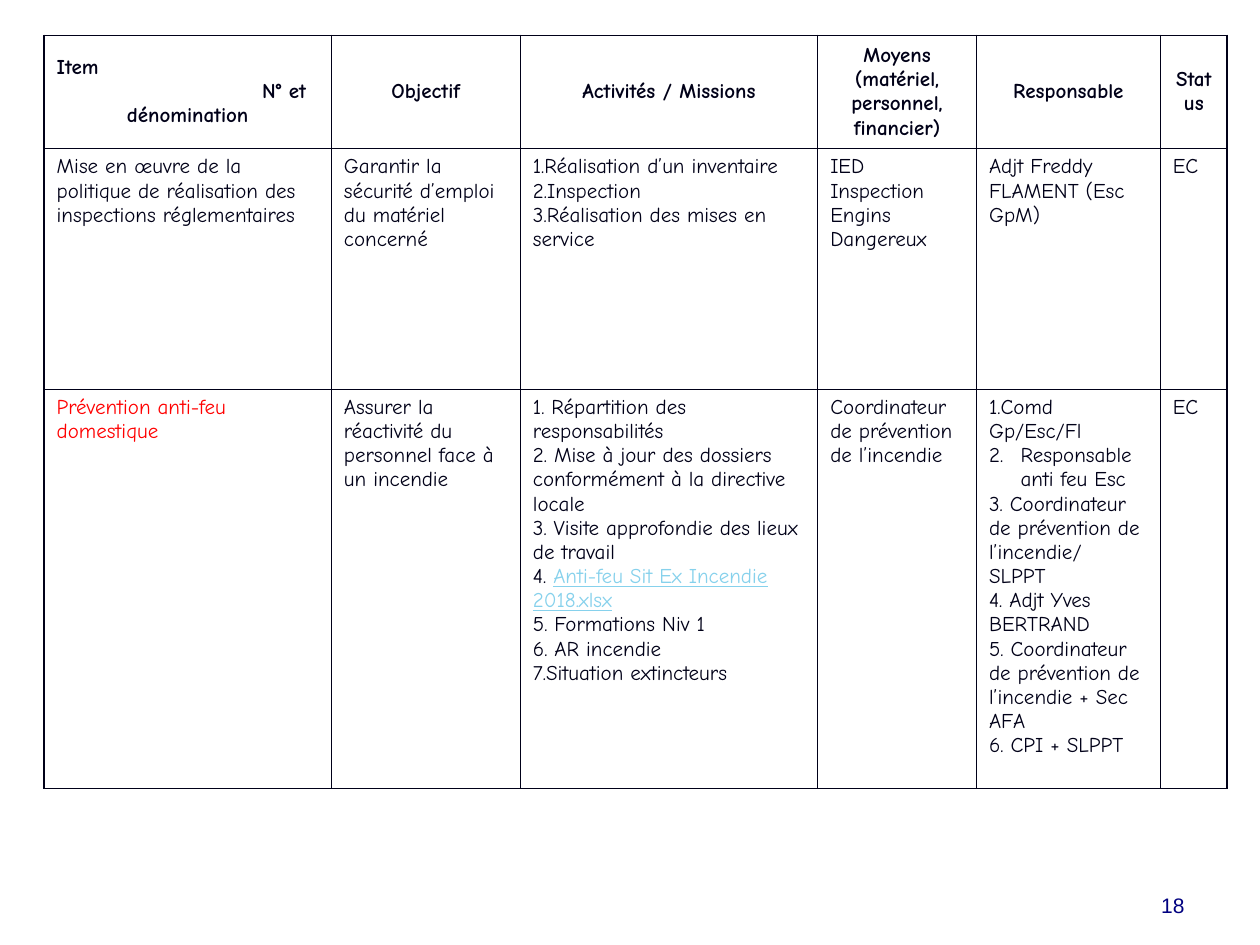
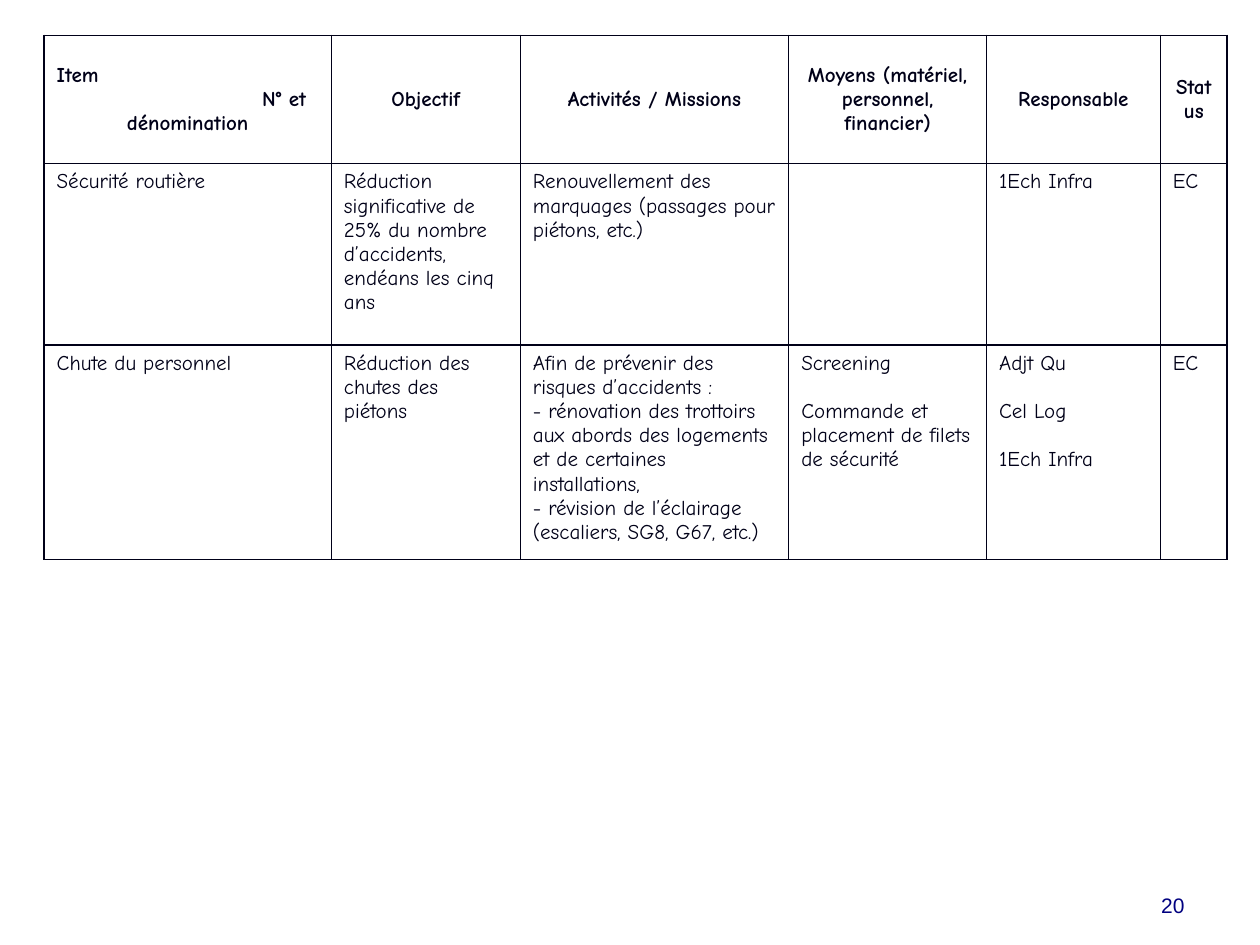
from lxml.etree import SubElement
from pptx import Presentation
from pptx.dml.color import RGBColor
from pptx.enum.text import MSO_ANCHOR, PP_ALIGN
from pptx.oxml.ns import qn
from pptx.util import Inches, Pt

COLOURS = {"ink": "000018", "alert": "FF0000", "link": "86D1EC",
           "number": "000080", "paper": "FFFFFF"}
FONT = "Comic Neue"
HEADERS = [
    ["Item", "N° et", "dénomination"],
    ["Objectif"],
    ["Activités / Missions"],
    ["Moyens (matériel, personnel, financier)"],
    ["Responsable"],
    ["Status"],
]
ITEM_ALIGNMENTS = [PP_ALIGN.LEFT, PP_ALIGN.LEFT, PP_ALIGN.CENTER]
LINK = "Anti-feu Sit Ex Incendie 2018.xlsx"
ALERT = "Prévention anti-feu domestique"
NUMBERED = [
    [" Répartition des responsabilités"],
    [" Mise à jour des dossiers conformément à la directive locale"],
    [" Visite approfondie des lieux de travail"],
    [" ", LINK],
    [" Formations Niv 1"],
    [" AR incendie"],
    ["Situation extincteurs"],
]
SECOND_MANAGER = "Responsable anti feu Esc"

PAGES = [
    {
        "number": "18",
        "columns": [2.28, 1.5, 2.36, 1.26, 1.46, 0.53],
        "heights": [0.9, 1.91, 3.17],
        "gap": 0,
        "rows": [
            [
                ["Mise en œuvre de la politique de réalisation des inspections réglementaires"],
                ["Garantir la sécurité d’emploi du matériel concerné"],
                ["1.Réalisation d’un inventaire", "2.Inspection",
                 "3.Réalisation des mises en service"],
                ["IED", "Inspection Engins Dangereux"],
                ["Adjt Freddy FLAMENT (Esc GpM)"],
                ["EC"],
            ],
            [
                [ALERT],
                ["Assurer la réactivité du personnel face à un incendie"],
                NUMBERED,
                ["Coordinateur de prévention de l’incendie"],
                ["1.Comd Gp/Esc/Fl", SECOND_MANAGER,
                 "3. Coordinateur de prévention de l’incendie/\nSLPPT",
                 "4. Adjt Yves BERTRAND",
                 "5. Coordinateur de prévention de l’incendie + Sec AFA",
                 "6. CPI + SLPPT"],
                ["EC"],
            ],
        ],
    },
    {
        "number": "20",
        "columns": [2.28, 1.5, 2.13, 1.57, 1.38, 0.53],
        "heights": [1.02, 1.44, 1.64],
        "gap": 13.8,
        "rows": [
            [
                ["Sécurité routière"],
                ["Réduction significative de 25% du nombre d’accidents, endéans les cinq ans"],
                ["Renouvellement des marquages (passages pour piétons, etc.)"],
                [],
                ["1Ech Infra"],
                ["EC"],
            ],
            [
                ["Chute du personnel"],
                ["Réduction des chutes des piétons"],
                ["Afin de prévenir des risques d’accidents :",
                 "- rénovation des trottoirs aux abords des logements et de certaines installations,",
                 "- révision de l’éclairage (escaliers, SG8, G67, etc.)"],
                ["Screening", "Commande et placement de filets de sécurité"],
                ["Adjt Qu", "Cel Log", "1Ech Infra"],
                ["EC"],
            ],
        ],
    },
]
GAP_COLUMNS = (3, 4)


def add_span(para, text, colour, font=FONT, bold=False):
    span = para.add_run()
    span.text = text
    span.font.name = font
    span.font.size = Pt(12)
    span.font.bold = bold
    span.font.color.rgb = RGBColor.from_string(COLOURS[colour])
    return span


def add_number(para, start, indent):
    properties = para._p.get_or_add_pPr()
    properties.set("marL", str(Inches(indent)))
    properties.set("indent", str(-Inches(indent)))
    numbering = SubElement(properties, qn("a:buAutoNum"), type="arabicPeriod")
    if start > 1:
        numbering.set("startAt", str(start))


deck = Presentation()
deck.slide_width = Inches(10)
deck.slide_height = Inches(7.5)

for page in PAGES:
    slide = deck.slides.add_slide(deck.slide_layouts[6])
    rows = [HEADERS] + page["rows"]
    frame = slide.shapes.add_table(
        len(rows), len(HEADERS), Inches(0.35), Inches(0.28),
        Inches(sum(page["columns"])), Inches(sum(page["heights"])))
    table = frame.table
    table.first_row = False
    table.horz_banding = False
    for column, width in zip(table.columns, page["columns"]):
        column.width = Inches(width)
    for row, height in zip(table.rows, page["heights"]):
        row.height = Inches(height)

    for row_index, row in enumerate(rows):
        is_header = row_index == 0
        for column_index, paragraphs in enumerate(row):
            cell = table.cell(row_index, column_index)
            cell.vertical_anchor = MSO_ANCHOR.MIDDLE if is_header else MSO_ANCHOR.TOP
            properties = cell._tc.get_or_add_tcPr()
            for side in ("lnL", "lnR", "lnT", "lnB"):
                border = SubElement(properties, qn("a:" + side), w=str(Pt(1)))
                fill = SubElement(border, qn("a:solidFill"))
                SubElement(fill, qn("a:srgbClr"), val=COLOURS["ink"])
            cell.fill.solid()
            cell.fill.fore_color.rgb = RGBColor.from_string(COLOURS["paper"])

            for index, content in enumerate(paragraphs):
                text_frame = cell.text_frame
                para = text_frame.paragraphs[0] if index == 0 else text_frame.add_paragraph()
                if is_header:
                    para.alignment = PP_ALIGN.CENTER
                    if column_index == 0:
                        para.alignment = ITEM_ALIGNMENTS[index]
                    if content == "N° et":
                        para._p.get_or_add_pPr().set("marL", str(Inches(1.63)))
                elif index and page["gap"] and column_index in GAP_COLUMNS:
                    para.space_before = Pt(page["gap"])
                if paragraphs is NUMBERED:
                    add_number(para, 1, 0)
                elif content == SECOND_MANAGER:
                    add_number(para, 2, 0.25)
                pieces = content if paragraphs is NUMBERED else content.split("\n")
                for piece_index, piece in enumerate(pieces):
                    if piece_index and paragraphs is not NUMBERED:
                        para.add_line_break()
                    colour = {ALERT: "alert", LINK: "link"}.get(piece, "ink")
                    span = add_span(para, piece, colour, bold=is_header)
                    if piece == LINK:
                        span.font.underline = True

    box = slide.shapes.add_textbox(Inches(7.17), Inches(6.83), Inches(2.33), Inches(0.5))
    box.text_frame.word_wrap = True
    box.text_frame.vertical_anchor = MSO_ANCHOR.BOTTOM
    para = box.text_frame.paragraphs[0]
    para.alignment = PP_ALIGN.RIGHT
    add_span(para, page["number"], "number", font="Arial")

deck.save("out.pptx")
